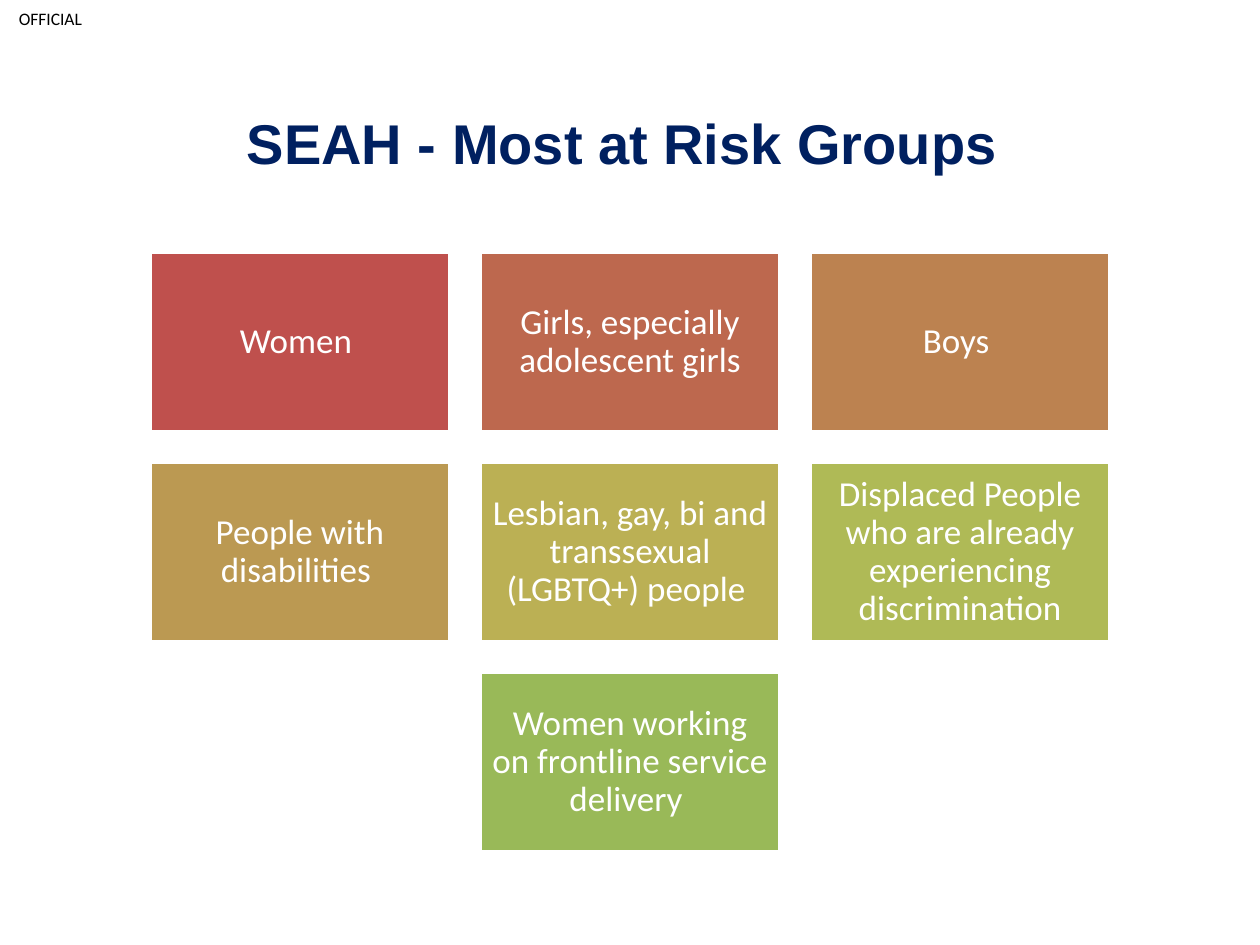
"""Build a slide of the groups most at risk of SEAH as a grid of coloured tiles."""
from dataclasses import dataclass

from pptx import Presentation
from pptx.dml.color import RGBColor as Rgb
from pptx.enum.shapes import MSO_SHAPE as Shape
from pptx.enum.text import MSO_ANCHOR as Anchor, PP_ALIGN as Align
from pptx.util import Pt


@dataclass(frozen=True)
class Theme:
    head: str = "Arial"
    body: str = "Calibri"
    navy: str = "002060"
    white: str = "FFFFFF"
    black: str = "000000"
    tiles: tuple = ("BF504D", "BD684E", "BC8250", "BB9952", "BBB054", "AFBA56", "99B958")
    big: int = 32
    mid: int = 20
    small: int = 10


def style(para, face, size, color, bold=False):
    para.font.name = face
    para.font.size = Pt(size)
    para.font.bold = bold
    para.font.color.rgb = Rgb.from_string(color)


def inset(frame, left, top, right, bottom):
    frame.margin_left, frame.margin_top = Pt(left), Pt(top)
    frame.margin_right, frame.margin_bottom = Pt(right), Pt(bottom)
    frame.vertical_anchor = Anchor.MIDDLE


theme = Theme()
deck = Presentation()
deck.slide_width, deck.slide_height = Pt(720), Pt(540)
slide = deck.slides.add_slide(deck.slide_layouts[5])

label = slide.shapes.add_textbox(Pt(0), Pt(0), Pt(57.6), Pt(20.9))
label.text_frame.text = "OFFICIAL"
label.text_frame.word_wrap = False
inset(label.text_frame, 10.8, 0, 0, 0)
style(label.text_frame.paragraphs[0], theme.body, theme.small, theme.black)

title = slide.shapes.title
title.left, title.top, title.width, title.height = Pt(49.5), Pt(28.8), Pt(621), Pt(104.4)
title.text_frame.text = "SEAH - Most at Risk Groups "
inset(title.text_frame, 7.2, 3.6, 7.2, 3.6)
para = title.text_frame.paragraphs[0]
para.alignment = Align.CENTER
style(para, theme.head, theme.big, theme.navy, True)

groups = [
    "Women ",
    "Girls, especially adolescent girls",
    "Boys ",
    "People with disabilities ",
    "Lesbian, gay, bi and transsexual (LGBTQ+) people ",
    "Displaced People who are already experiencing discrimination",
    "Women working on frontline service delivery ",
]
cols, wide, high, gap, top = 3, 171.4, 102.8, 17.2, 144

for num, (group, fill) in enumerate(zip(groups, theme.tiles)):
    row, col = divmod(num, cols)
    count = min(cols, len(groups) - row * cols)
    left = (720 - count * wide - (count - 1) * gap) / 2
    x, y = left + col * (wide + gap), top + row * (high + gap)
    tile = slide.shapes.add_shape(Shape.RECTANGLE, Pt(x), Pt(y), Pt(wide), Pt(high))
    tile.shadow.inherit = False
    tile.fill.solid()
    tile.fill.fore_color.rgb = Rgb.from_string(fill)
    tile.line.color.rgb = Rgb.from_string(theme.white)
    tile.line.width = Pt(2)
    frame = tile.text_frame
    frame.text = group
    frame.word_wrap = True
    inset(frame, 6, 6, 6, 6)
    para = frame.paragraphs[0]
    para.alignment = Align.CENTER
    para.line_spacing = 0.9
    style(para, theme.body, theme.mid, theme.white)

deck.save("out.pptx")
